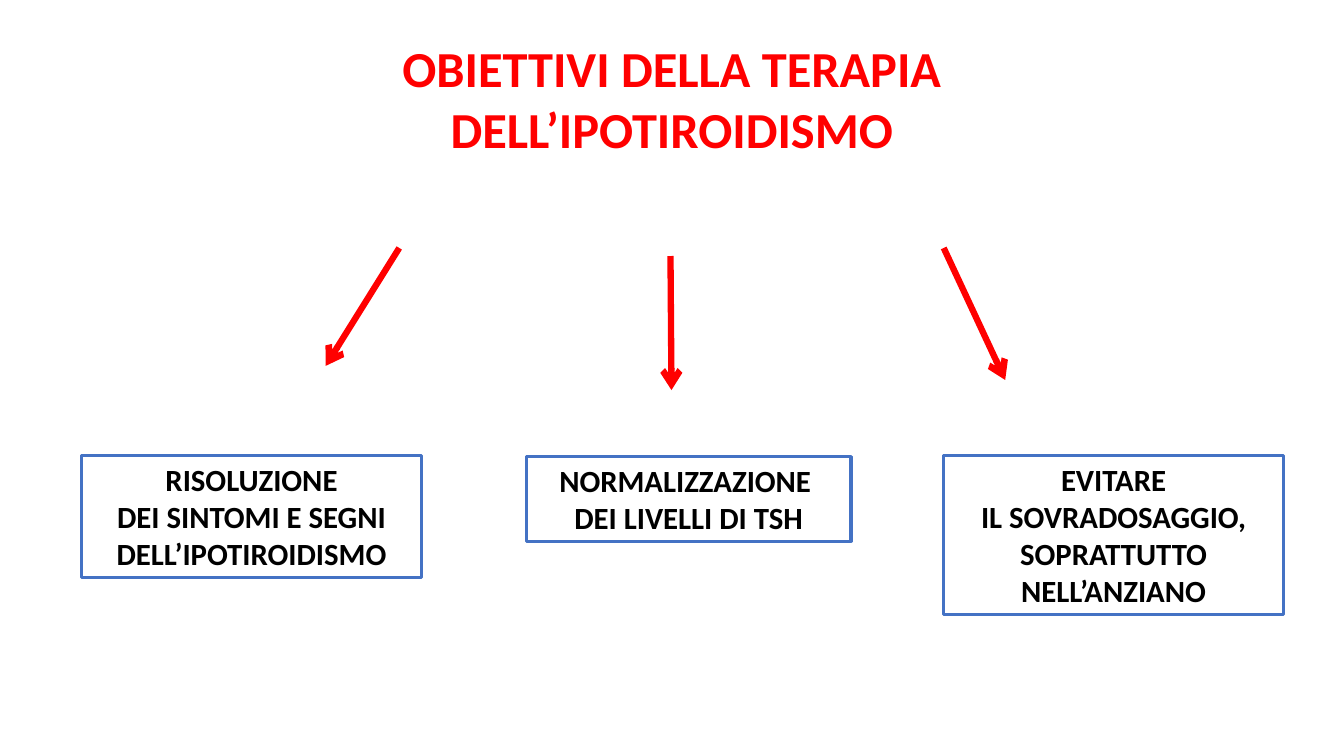
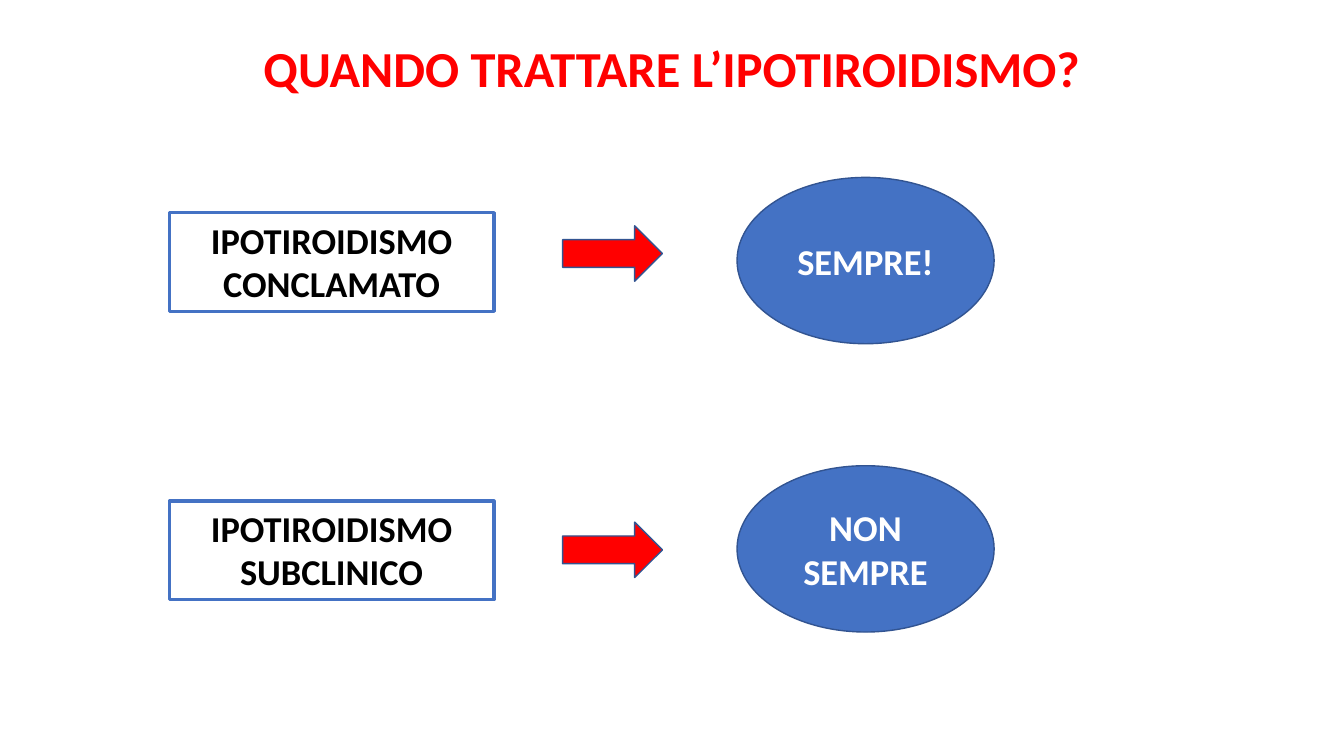
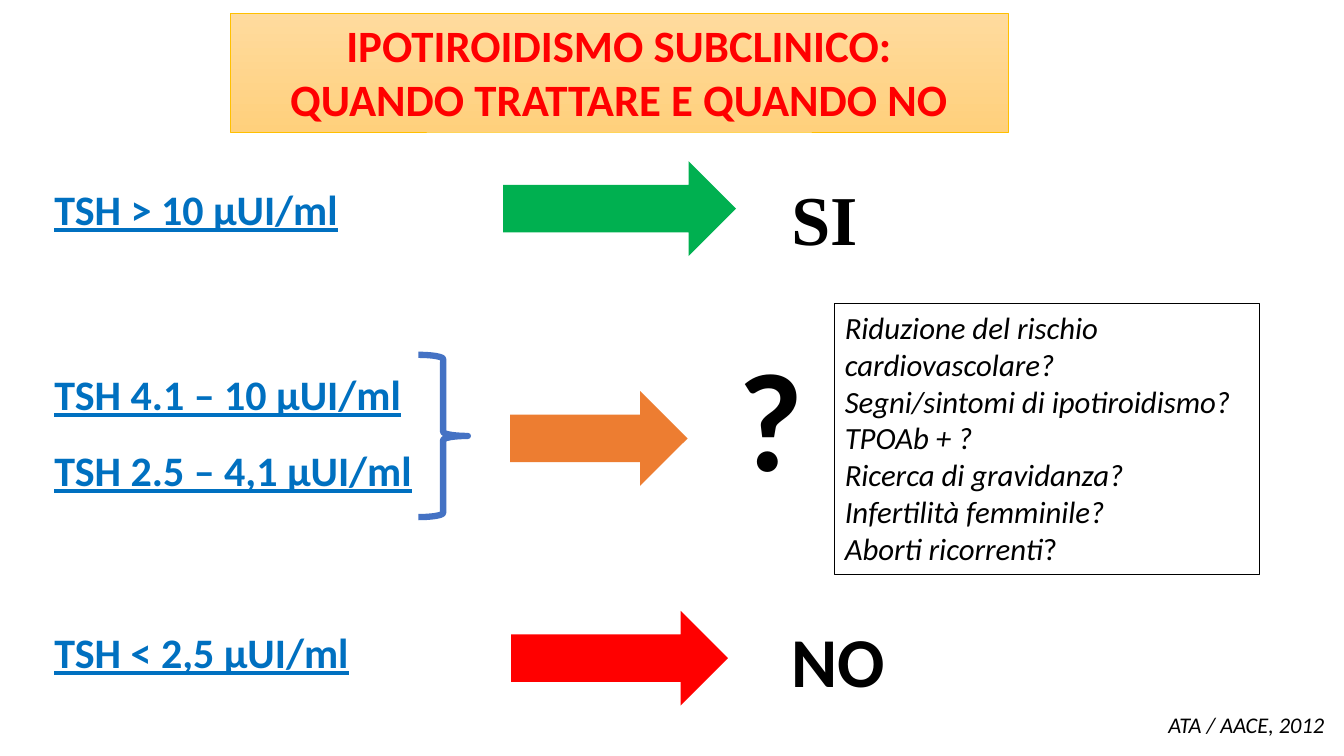
from dataclasses import dataclass
from typing import Any, NamedTuple, Optional

from lxml import etree
from pptx import Presentation, slide as s, util as u
from pptx.dml.color import RGBColor
from pptx.enum import shapes, text
from pptx.oxml import ns

Kind = shapes.MSO_SHAPE
Align = text.PP_ALIGN
Anchor = text.MSO_ANCHOR


@dataclass(frozen=True)
class Theme:
    red: str = "FF0000"
    blue: str = "4472C4"
    navy: str = "325491"
    link: str = "0070C0"
    green: str = "00B050"
    orange: str = "ED7D31"
    gold: str = "FFC000"
    sand: tuple[str, str] = ("FFDB9E", "FFD07C")
    black: str = "000000"
    white: str = "FFFFFF"
    font: str = "Calibri"
    serif: str = "Times New Roman"
    title: int = 36
    banner: int = 32
    level: int = 30
    case: int = 26
    body: int = 22
    source: int = 16
    verdict: int = 50
    doubt: int = 100


T = Theme()


class Box(NamedTuple):
    left: float
    top: float
    width: float
    height: float


class Style(NamedTuple):
    size: int
    color: str = T.black
    bold: bool = True
    italic: bool = False
    underline: bool = False
    name: str = T.font
    align: Align = Align.LEFT


class Line(NamedTuple):
    color: str
    width: float


class Goal(NamedTuple):
    box: Box
    lines: str
    start: tuple[float, float]
    end: tuple[float, float]


class Case(NamedTuple):
    top: float
    arrow: float
    name: str
    answer: str


class Verdict(NamedTuple):
    arrow: Box
    color: str
    box: Box
    answer: str
    style: Style


TITLE = Style(T.title, T.red, align=Align.CENTER)
BANNER = TITLE._replace(size=T.banner)
GOAL = Style(T.body, align=Align.CENTER)
CASE = GOAL._replace(size=T.case)
ANSWER = CASE._replace(color=T.white)
LEVEL = Style(T.level, T.link, underline=True)
NOTE = Style(T.body, bold=False, italic=True)
SOURCE = NOTE._replace(size=T.source)
VERDICT = Style(T.verdict)

FRAME = Line(T.blue, 2.25)
EDGE = Line(T.navy, 1)

GOALS = [
    Goal(Box(0.81, 4.52, 3.37, 1.21),
         "RISOLUZIONE\nDEI SINTOMI E SEGNI\nDELL’IPOTIROIDISMO", (3.96, 2.46), (3.23, 3.63)),
    Goal(Box(5.22, 4.53, 3.22, 0.84),
         "NORMALIZZAZIONE \nDEI LIVELLI DI TSH", (6.65, 2.54), (6.66, 3.87)),
    Goal(Box(9.36, 4.52, 3.37, 1.58),
         "EVITARE\nIL SOVRADOSAGGIO,\nSOPRATTUTTO\nNELL’ANZIANO", (9.36, 2.46), (9.97, 3.77)),
]
CASES = [
    Case(2.11, 2.24, "IPOTIROIDISMO CONCLAMATO", "SEMPRE!"),
    Case(4.97, 5.18, "IPOTIROIDISMO SUBCLINICO", "NON SEMPRE"),
]
LEVELS = {
    "TSH > 10 μUI/ml": 1.77,
    "TSH 4.1 – 10 μUI/ml": 3.61,
    "TSH 2.5 – 4,1 μUI/ml": 4.36,
    "TSH < 2,5 μUI/ml": 6.17,
}
VERDICTS = [
    Verdict(Box(4.99, 1.6, 2.31, 0.94), T.green, Box(7.75, 1.69, 1.03, 0.94), "SI",
            VERDICT._replace(name=T.serif)),
    Verdict(Box(5.06, 3.88, 1.76, 0.94), T.orange, Box(7.23, 3.24, 1.03, 1.78), "?",
            VERDICT._replace(size=T.doubt)),
    Verdict(Box(5.07, 6.06, 2.15, 0.94), T.red, Box(7.75, 6.08, 1.36, 0.94), "NO", VERDICT),
]
CHECKS = """Riduzione del rischio cardiovascolare?
Segni/sintomi di ipotiroidismo?
TPOAb + ?
Ricerca di gravidanza?
Infertilità femminile?
Aborti ricorrenti"""


def place(box: Box) -> list[u.Length]:
    return [u.Inches(side) for side in box]


def add_run(par: Any, words: str, style: Style) -> None:
    run = par.add_run()
    run.text = words
    form = style._asdict() | {"size": u.Pt(style.size)}
    for key in ("name", "size", "bold", "italic", "underline"):
        setattr(run.font, key, form[key])
    run.font.color.rgb = RGBColor.from_string(style.color)


def write(shape: Any, lines: str, style: Style, anchor: Anchor = Anchor.TOP,
          wrap: bool = True, grow: bool = True) -> None:
    """Fill the shape with one paragraph for each line."""
    frame = shape.text_frame
    size = text.MSO_AUTO_SIZE
    form = {
        "word_wrap": wrap,
        "vertical_anchor": anchor,
        "auto_size": size.SHAPE_TO_FIT_TEXT if grow else size.NONE,
    }
    for key, value in form.items():
        setattr(frame, key, value)
    for num, words in enumerate(lines.split("\n")):
        par = frame.add_paragraph() if num else frame.paragraphs[0]
        par.alignment = style.align
        add_run(par, words, style)


def add_text(page: s.Slide, box: Box, lines: str, style: Style, wrap: bool = True) -> None:
    write(page.shapes.add_textbox(*place(box)), lines, style, wrap=wrap)


def add_shape(page: s.Slide, kind: Kind, box: Box, fill: Optional[str] = None,
              line: Optional[Line] = None) -> Any:
    shape = page.shapes.add_shape(kind, *place(box))
    shape.shadow.inherit = False
    if fill:
        shape.fill.solid()
        shape.fill.fore_color.rgb = RGBColor.from_string(fill)
    else:
        shape.fill.background()
    if line:
        shape.line.color.rgb = RGBColor.from_string(line.color)
        shape.line.width = u.Pt(line.width)
    else:
        shape.line.fill.background()
    return shape


def add_arrow(page: s.Slide, start: tuple[float, float], end: tuple[float, float]) -> None:
    ends = [u.Inches(side) for side in start + end]
    arrow = page.shapes.add_connector(shapes.MSO_CONNECTOR.STRAIGHT, *ends)
    arrow.line.color.rgb = RGBColor.from_string(T.red)
    arrow.line.width = u.Pt(4.5)
    etree.SubElement(arrow.line._get_or_add_ln(), ns.qn("a:tailEnd"), type="arrow")
    etree.SubElement(arrow._element.spPr, ns.qn("a:effectLst"))


def add_title(page: s.Slide, lines: str, height: float) -> None:
    add_text(page, Box(0, 0.32, 13.33, height), lines, TITLE)


def draw_goals(page: s.Slide) -> None:
    add_title(page, "OBIETTIVI DELLA TERAPIA\nDELL’IPOTIROIDISMO", 1.31)
    for goal in GOALS:
        write(add_shape(page, Kind.RECTANGLE, goal.box, T.white, FRAME), goal.lines, GOAL)
        add_arrow(page, goal.start, goal.end)


def draw_cases(page: s.Slide) -> None:
    add_title(page, "QUANDO TRATTARE L’IPOTIROIDISMO?", 0.71)
    for case in CASES:
        frame = add_shape(page, Kind.RECTANGLE, Box(1.68, case.top, 3.22, 0.98), T.white, FRAME)
        write(frame, case.name, CASE)
        add_shape(page, Kind.RIGHT_ARROW, Box(5.58, case.arrow, 0.99, 0.55), T.red, EDGE)
        oval = add_shape(page, Kind.OVAL, Box(7.31, case.top - 0.35, 2.55, 1.65), T.blue, EDGE)
        write(oval, case.answer, ANSWER, Anchor.MIDDLE, grow=False)


def draw_levels(page: s.Slide) -> None:
    banner = add_shape(page, Kind.RECTANGLE, Box(2.28, 0.13, 7.72, 1.18), line=Line(T.gold, 0.5))
    banner.fill.gradient()
    banner.fill.gradient_angle = 270
    for stop, color in zip(banner.fill.gradient_stops, T.sand):
        stop.color.rgb = RGBColor.from_string(color)
    write(banner, "IPOTIROIDISMO SUBCLINICO:\nQUANDO TRATTARE E QUANDO NO", BANNER)

    for words, top in LEVELS.items():
        add_text(page, Box(0.44, top, 5.78, 0.61), words, LEVEL)
    add_shape(page, Kind.RIGHT_BRACE, Box(4.15, 3.52, 0.49, 1.61), line=Line(T.blue, 4.5))
    for item in VERDICTS:
        add_shape(page, Kind.RIGHT_ARROW, item.arrow, item.color)
        add_text(page, item.box, item.answer, item.style)

    checks = add_shape(page, Kind.RECTANGLE, Box(8.28, 3.01, 4.21, 2.69), line=Line(T.black, 0.75))
    write(checks, CHECKS, NOTE)
    add_run(checks.text_frame.paragraphs[-1], "?", NOTE._replace(italic=False))
    add_text(page, Box(11.49, 7.01, 1.77, 0.37), "ATA / AACE, 2012", SOURCE, wrap=False)


def main() -> None:
    deck = Presentation()
    deck.slide_width, deck.slide_height = u.Inches(13.33), u.Inches(7.5)
    for draw in (draw_goals, draw_cases, draw_levels):
        draw(deck.slides.add_slide(deck.slide_layouts[6]))
    deck.save("out.pptx")


if __name__ == "__main__":
    main()
